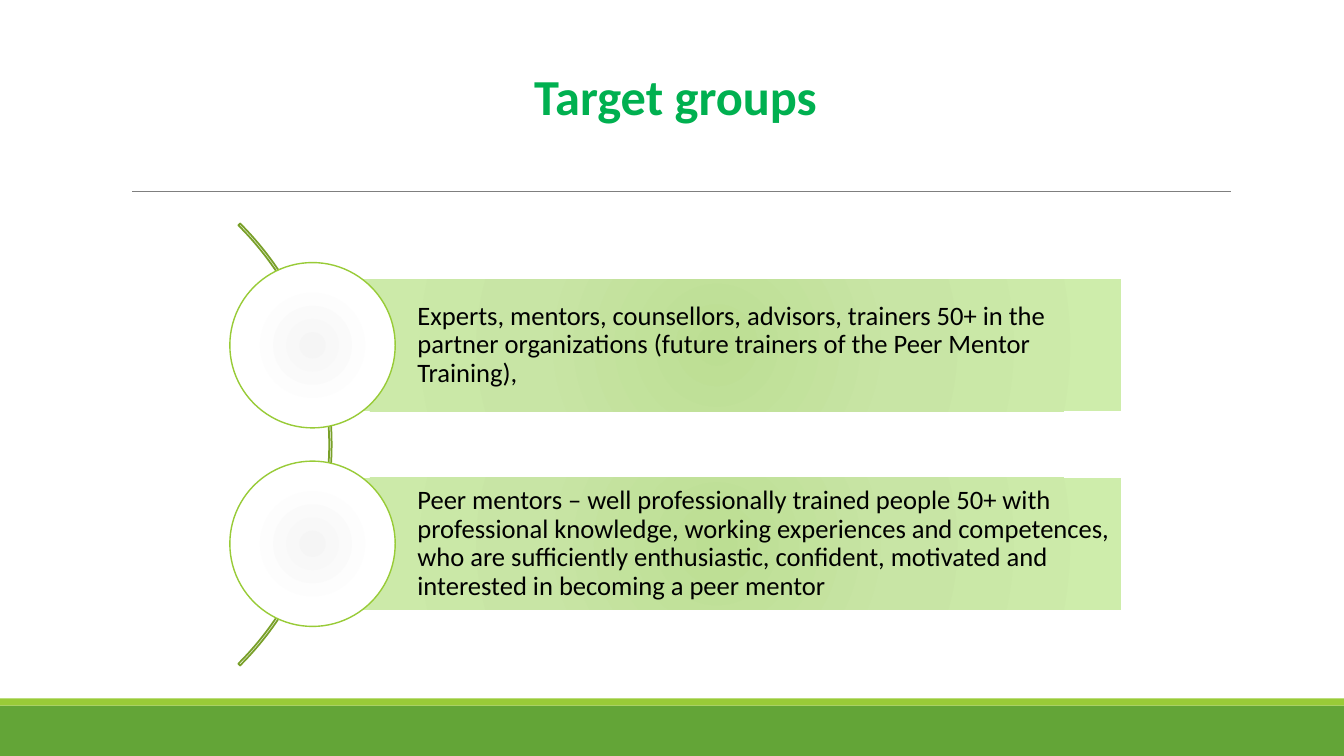
import pptx
import pptx.util
import pptx.dml.color
import pptx.enum.shapes
import pptx.enum.text
import pptx.oxml
import pptx.oxml.ns

Inches = pptx.util.Inches
Pt = pptx.util.Pt
RGB = pptx.dml.color.RGBColor
SHAPE = pptx.enum.shapes.MSO_SHAPE
ANCHOR = pptx.enum.text.MSO_ANCHOR
ALIGN = pptx.enum.text.PP_ALIGN

GREEN = RGB(0x63, 0xA5, 0x37)
LIME = RGB(0x99, 0xCB, 0x38)
RING = RGB(0x98, 0xCB, 0x37)
OLIVE = RGB(0x79, 0xA0, 0x29)
TITLE = RGB(0x00, 0xB0, 0x50)
GRAY = RGB(0x7F, 0x7F, 0x7F)
BLACK = RGB(0, 0, 0)
BAR_GLOW = (RGB(0xBC, 0xDE, 0x93), RGB(0xC8, 0xE5, 0xA5), RGB(0xCE, 0xED, 0xAB))
DISC_GLOW = (RGB(0xF5, 0xF5, 0xF5), RGB(0xFD, 0xFD, 0xFD), RGB(0xFF, 0xFF, 0xFF))

GROUPS = (
    "Experts, mentors, counsellors, advisors, trainers 50+ in the partner "
    "organizations (future trainers of the Peer Mentor Training),",
    "Peer mentors – well professionally trained people 50+ with professional "
    "knowledge, working experiences and competences, who are sufficiently "
    "enthusiastic, confident, motivated and interested in becoming a peer mentor",
)
MIDDLE = 3.425
STEP = 1.97
BAR_HIGH = 1.31
DISC = 1.64


def add_shape(slide, kind, left, top, width, height, fill=None, line=None, weight=1):
    """Add a shape; fill is None, one colour or three glow colours."""
    shape = slide.shapes.add_shape(
        kind, Inches(left), Inches(top), Inches(width), Inches(height))
    shape.shadow.inherit = False
    if fill is None:
        shape.fill.background()
    elif isinstance(fill, RGB):
        shape.fill.solid()
        shape.fill.fore_color.rgb = fill
    else:
        add_glow(shape, fill)
    if line is None:
        shape.line.fill.background()
    else:
        shape.line.color.rgb = line
        shape.line.width = Pt(weight)
    return shape


def add_glow(shape, colors):
    """Fill a shape with a gradient that spreads from its centre."""
    shape.fill.gradient()
    grad = shape._element.spPr.find(pptx.oxml.ns.qn("a:gradFill"))
    stops = "".join(
        f'<a:gs pos="{pos}"><a:srgbClr val="{color}"/></a:gs>'
        for pos, color in zip((0, 45000, 100000), colors))
    glow = pptx.oxml.parse_xml(
        f'<a:gradFill {pptx.oxml.ns.nsdecls("a")} rotWithShape="1">'
        f'<a:gsLst>{stops}</a:gsLst><a:path path="circle">'
        '<a:fillToRect l="50000" t="50000" r="50000" b="50000"/>'
        '</a:path></a:gradFill>')
    grad.getparent().replace(grad, glow)


def set_text(shape, text, size, color, anchor, align, space, inset=0.1, bold=False):
    frame = shape.text_frame
    frame.word_wrap = True
    frame.vertical_anchor = anchor
    frame.margin_left = Inches(inset)
    frame.margin_top = frame.margin_bottom = Inches(0.05)
    para = frame.paragraphs[0]
    para.text = text
    para.alignment = align
    para.line_spacing = space
    para.font.name = "Calibri"
    para.font.size = Pt(size)
    para.font.color.rgb = color
    para.font.bold = bold


def add_title(slide, text):
    box = slide.shapes.add_textbox(Inches(1.2), Inches(0.31), Inches(11), Inches(0.99))
    set_text(box, text, 36, TITLE, ANCHOR.BOTTOM, ALIGN.CENTER, 0.85, bold=True)


def add_rule(slide):
    rule = slide.shapes.add_connector(
        pptx.enum.shapes.MSO_CONNECTOR.STRAIGHT,
        Inches(1.31), Inches(1.9), Inches(12.21), Inches(1.9))
    rule.line.color.rgb = GRAY
    rule.line.width = Pt(0.75)
    rule._element.spPr.append(
        pptx.oxml.parse_xml(f'<a:effectLst {pptx.oxml.ns.nsdecls("a")}/>'))


def add_arc(slide):
    arc = add_shape(slide, SHAPE.BLOCK_ARC, -2.91, 1.31, 6.2, 6.2, None, OLIVE, 1.25)
    # Angles from 315 to 45 degrees, then the thickness of the band
    for index, value in enumerate((189, 27, 0.004)):
        arc.adjustments[index] = value


def add_group(slide, text, middle):
    """Add a text bar with a disc over its left end."""
    bar = add_shape(slide, SHAPE.RECTANGLE, 3.1, middle - BAR_HIGH / 2,
                    8.02, BAR_HIGH, BAR_GLOW)
    set_text(bar, text, 19, BLACK, ANCHOR.MIDDLE, ALIGN.LEFT, 0.9, inset=1.04)
    bar.text_frame.margin_right = Inches(0.05)
    add_shape(slide, SHAPE.OVAL, 2.28, middle - DISC / 2, DISC, DISC, DISC_GLOW, RING)


def main():
    deck = pptx.Presentation()
    deck.slide_width = Inches(13.33)
    deck.slide_height = Inches(7.5)
    slide = deck.slides.add_slide(deck.slide_layouts[6])
    add_shape(slide, SHAPE.RECTANGLE, 0, 7, 13.33, 0.5, GREEN)
    add_shape(slide, SHAPE.RECTANGLE, 0, 6.93, 13.33, 0.07, LIME)
    add_rule(slide)
    add_title(slide, "Target groups")
    add_arc(slide)
    for index, text in enumerate(GROUPS):
        add_group(slide, text, MIDDLE + index * STEP)
    deck.save("out.pptx")


if __name__ == "__main__":
    main()
